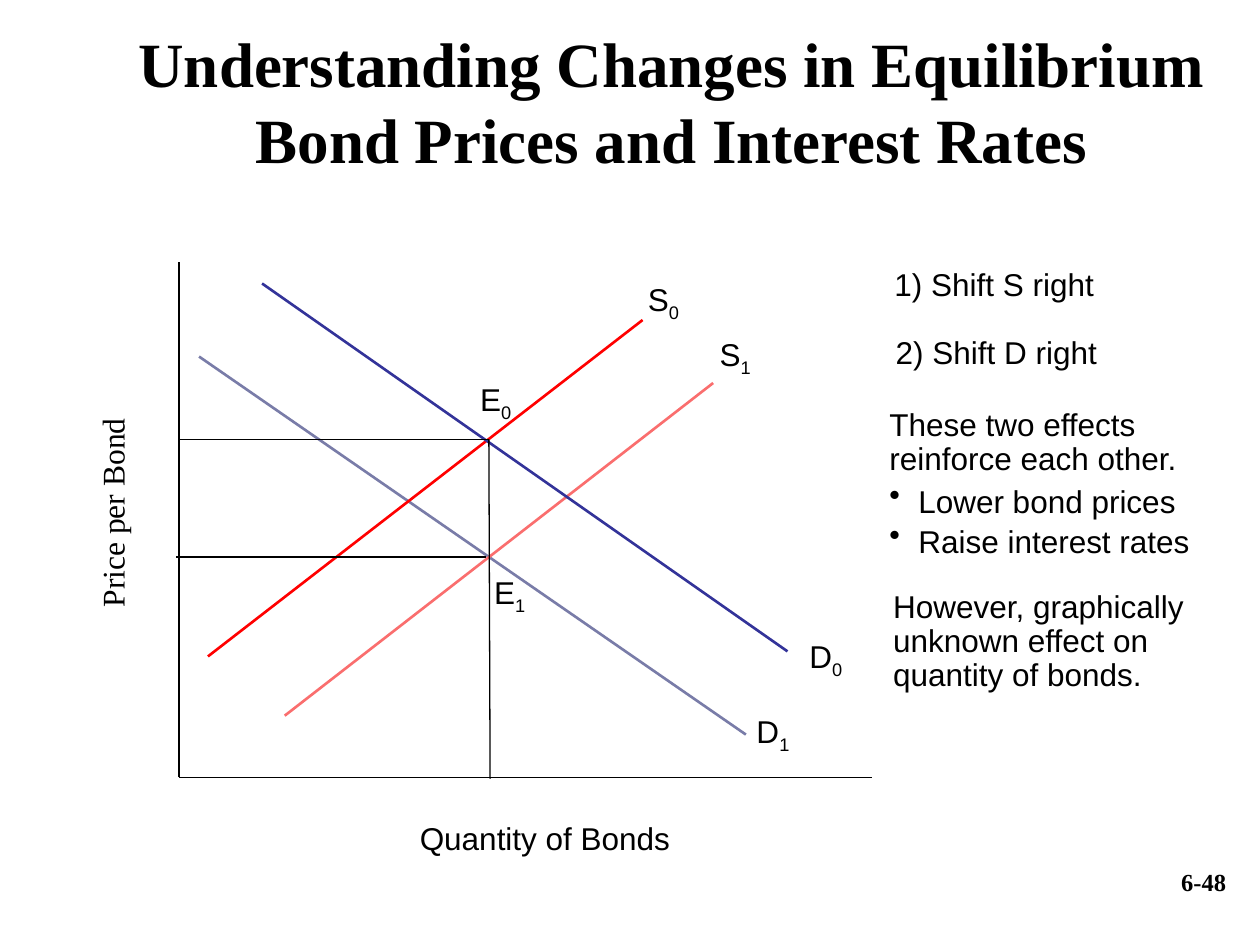
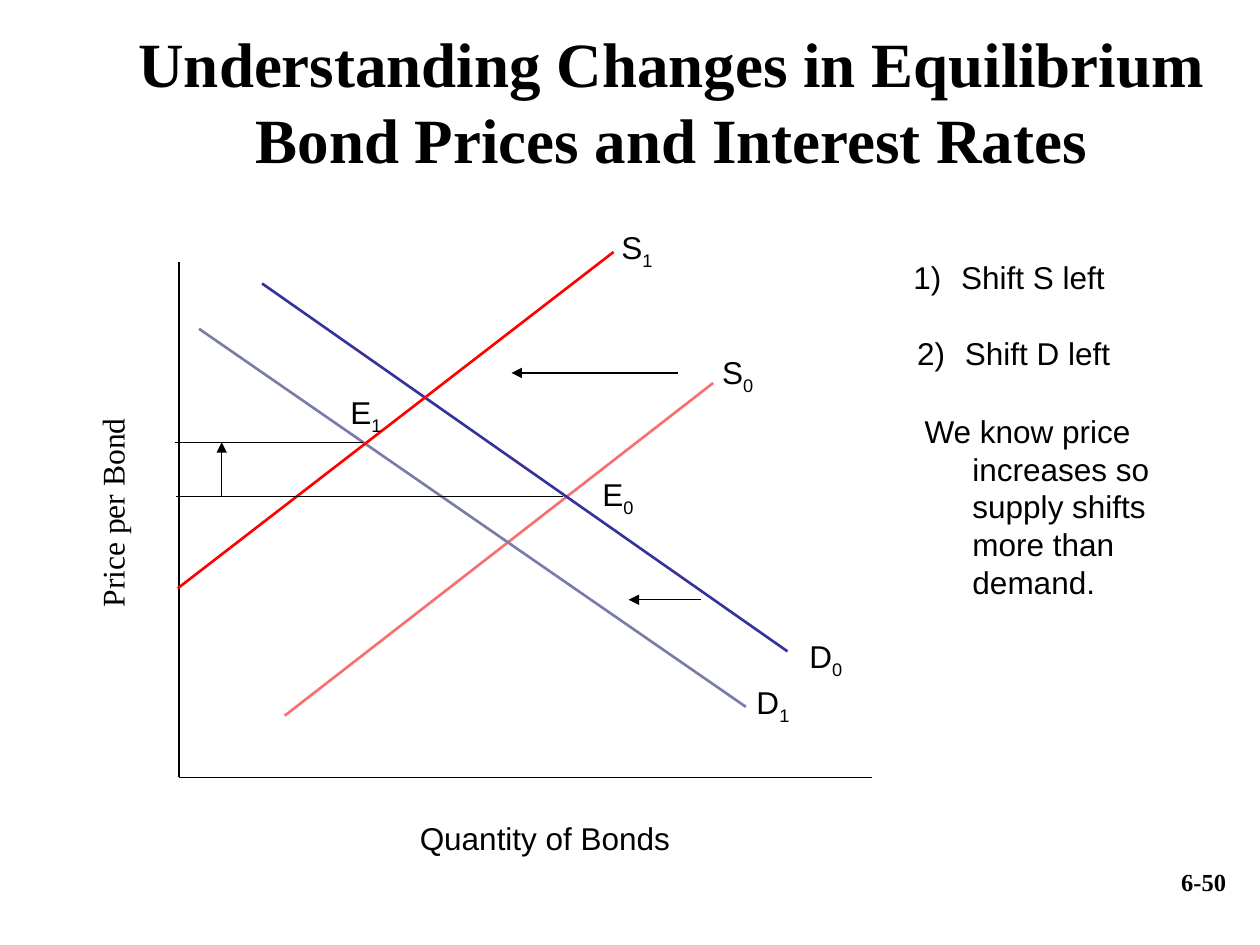
from lxml import etree
from pptx import Presentation
from pptx.dml.color import RGBColor
from pptx.enum import shapes, text
from pptx.oxml import ns
from pptx.util import Inches, Pt

BLACK = RGBColor(0, 0, 0)
RED = RGBColor(0xFF, 0, 0)
PINK = RGBColor(0xFA, 0x6E, 0x6E)
BLUE = RGBColor(0x33, 0x33, 0x99)
GRAY = RGBColor(0x79, 0x7C, 0xA8)
SANS, SERIF = "Arial", "Times New Roman"
LEFT, MID, RIGHT = text.PP_ALIGN.LEFT, text.PP_ALIGN.CENTER, text.PP_ALIGN.RIGHT
TITLE = "Understanding Changes in Equilibrium Bond Prices and Interest Rates"
GRAPH = (1.42, 2.08, 5.5, 4.09)


def style(run, size=18, font=SANS, bold=False):
    """Set the font of a run."""
    run.font.size, run.font.name, run.font.bold = Pt(size), font, bold
    run.font.color.rgb = BLACK


def write(slide, box, words, align=LEFT, middle=False, **look):
    """Add a wrapped text box with one paragraph per entry of words."""
    shape = slide.shapes.add_textbox(*map(Inches, box))
    frame = shape.text_frame
    frame.text = "\n".join(words)
    frame.word_wrap = True
    if middle:
        frame.vertical_anchor = text.MSO_ANCHOR.MIDDLE
    for para in frame.paragraphs:
        para.alignment = align
        for run in para.runs:
            style(run, **look)
    return shape


def label(slide, box, words, sub="", font=SANS, turn=0):
    """Add a tight centred label with an optional subscript."""
    shape = write(slide, box, [words], MID, True, font=font)
    frame = shape.text_frame
    frame.word_wrap = False
    frame.margin_left = frame.margin_right = 0
    frame.margin_top = frame.margin_bottom = 0
    shape.rotation = turn
    if sub:
        run = frame.paragraphs[0].add_run()
        run.text = sub
        style(run)
        run._r.get_or_add_rPr().set("baseline", "-25000")


def line(slide, box, ends, color=BLACK, width=0.75, arrow=False):
    """Draw a straight line given by its ends within the box."""
    x, y = box[:2]
    x1, y1, x2, y2 = ends
    link = slide.shapes.add_connector(
        shapes.MSO_CONNECTOR.STRAIGHT,
        Inches(x + x1), Inches(y + y1), Inches(x + x2), Inches(y + y2))
    link.line.color.rgb = color
    link.line.width = Pt(width)
    if arrow:
        tip = etree.SubElement(link.line._get_or_add_ln(), ns.qn("a:tailEnd"))
        tip.set("type", "triangle")
    etree.SubElement(link._element.spPr, ns.qn("a:effectLst"))


def mark(para, kind, indent, **attrs):
    """Give a paragraph a hanging indent and, if named, a bullet."""
    props = para._p.get_or_add_pPr()
    props.set("marL", str(Inches(indent)))
    props.set("indent", str(-Inches(indent)))
    if kind:
        bullet = etree.SubElement(props, ns.qn("a:" + kind))
        for key, value in attrs.items():
            bullet.set(key, value)


def note(slide, box, words):
    """Add a side note whose later lines are bullets."""
    first, *rest = write(slide, box, words).text_frame.paragraphs
    first.line_spacing = 0.9
    for para in rest:
        mark(para, "buChar", 0.23, char="•")
        para.line_spacing = 0.6
        para.space_before = Pt(10)


def hang(slide, box, words, start=None):
    """Add a side note with a hanging indent, numbered from start."""
    para = write(slide, box, [words]).text_frame.paragraphs[0]
    if start:
        mark(para, "buAutoNum", 0.38, type="arabicParenR", startAt=str(start))
    else:
        mark(para, None, 0.38)


def base(deck, page):
    """Add a slide with its title and page number."""
    slide = deck.slides.add_slide(deck.slide_layouts[6])
    write(slide, (0.83, 0.17, 9, 1.25), [TITLE], MID, True,
          size=36, font=SERIF, bold=True)
    write(slide, (7.5, 6.83, 2.33, 0.52), [page], RIGHT,
          size=14, font=SERIF, bold=True)
    return slide


def graph(slide, box, curves, tags, guides, arrows=()):
    """Draw the axes, the curves, their tags, the guides and the arrows."""
    x, y, w, h = box
    for ends in ((0, 0, 0, h), (0, h, w, h)):
        line(slide, box, ends)
    for color, ends in curves:
        line(slide, box, ends, color, 1.5)
    for ends in guides:
        line(slide, box, ends)
    for ends in arrows:
        line(slide, box, ends, arrow=True)
    label(slide, (x - 1.28, y + 1.84, 1.5, 0.3), "Price per Bond",
          font=SERIF, turn=270)
    label(slide, (x + 1.91, y + h + 0.33, 1.99, 0.3), "Quantity of Bonds")
    for name, dx, dy in tags:
        label(slide, (x + dx, y + dy, 0.27, 0.3), name[0], name[1])


def main():
    """Build both slides and save the deck."""
    deck = Presentation()
    deck.slide_width, deck.slide_height = Inches(10), Inches(7.5)
    demand = (BLUE, (0.66, 0.17, 4.83, 3.09))
    supply = (PINK, (0.84, 3.6, 4.24, 0.96))

    slide = base(deck, "6-48")
    graph(slide, GRAPH,
          [(GRAY, (0.16, 0.75, 4.5, 3.75)), supply,
           (RED, (0.23, 3.13, 3.68, 0.46)), demand],
          [("D1", 4.58, 3.59), ("S1", 4.28, 0.6), ("D0", 5, 3),
           ("S0", 3.71, 0.16), ("E0", 2.38, 0.96), ("E1", 2.49, 2.49)],
          [(2.46, 1.41, 2.47, 4.1), (2.46, 1.41, 0, 1.41),
           (2.44, 2.34, -0.02, 2.34)])
    note(slide, (7, 2.09, 2.79, 0.37), ["1) Shift S right"])
    note(slide, (7.01, 2.63, 2.79, 0.37), ["2) Shift D right"])
    note(slide, (6.96, 3.2, 2.79, 1.31),
         ["These two effects reinforce each other.",
          "Lower bond prices", "Raise interest rates"])
    note(slide, (6.99, 4.64, 2.79, 0.91),
         ["However, graphically unknown effect on quantity of bonds."])

    slide = base(deck, "6-50")
    graph(slide, GRAPH,
          [supply, demand, (GRAY, (0.16, 0.53, 4.5, 3.53)),
           (RED, (-0.01, 2.59, 3.45, -0.08))],
          [("S0", 4.3, 0.74), ("D0", 5, 3), ("E0", 3.35, 1.71),
           ("D1", 4.58, 3.36), ("E1", 1.35, 1.06), ("S1", 3.5, -0.25)],
          [(3.05, 1.86, -0.02, 1.86), (1.46, 1.43, -0.03, 1.43)],
          [(4.14, 2.68, 3.57, 2.68), (0.34, 1.86, 0.34, 1.43),
           (3.96, 0.88, 2.64, 0.88)])
    hang(slide, (7.15, 2, 1.92, 0.4), "Shift S left", 1)
    hang(slide, (7.18, 2.6, 1.92, 0.4), "Shift D left", 2)
    hang(slide, (7.24, 3.22, 2.54, 1.6),
         "We know price increases so supply shifts more than demand.")
    deck.save("out.pptx")


if __name__ == "__main__":
    main()
